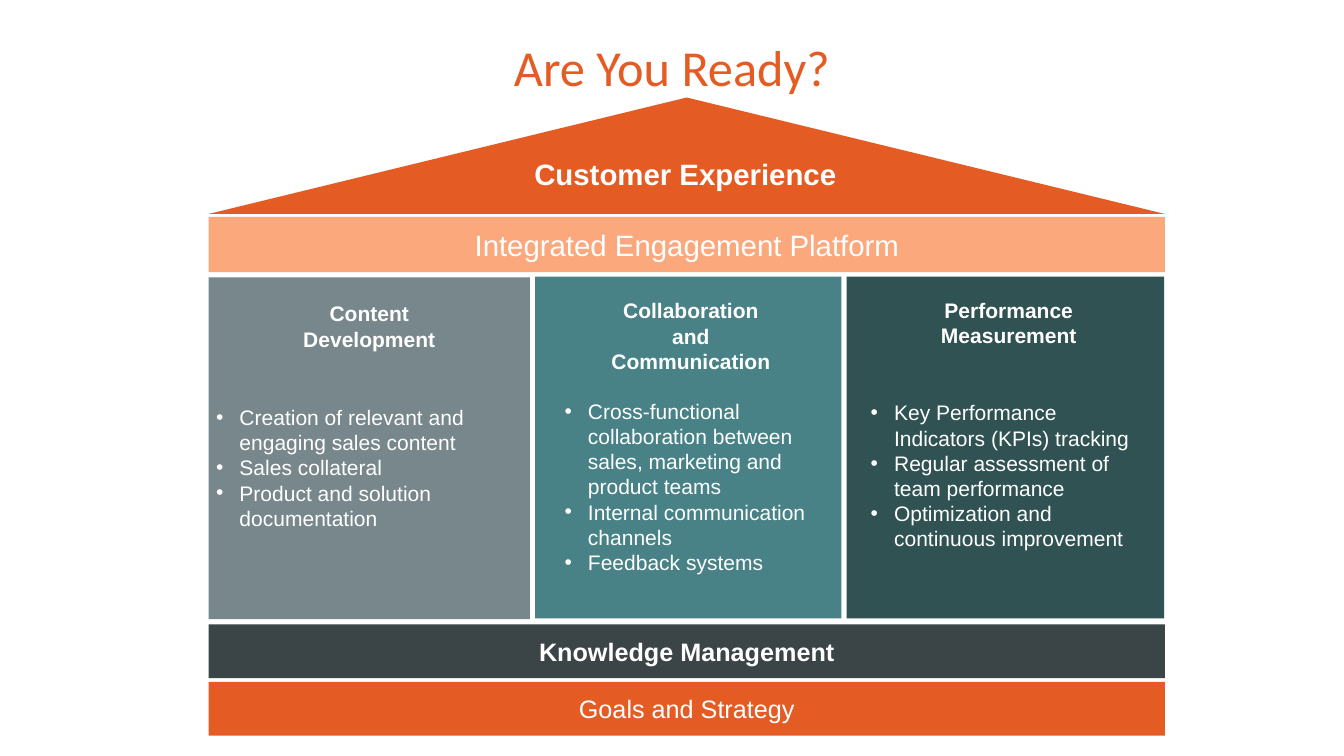
from lxml import etree
from pptx import Presentation
from pptx.dml.color import RGBColor
from pptx.enum.shapes import MSO_SHAPE
from pptx.enum.text import MSO_ANCHOR, MSO_AUTO_SIZE, PP_ALIGN
from pptx.oxml.ns import qn
from pptx.util import Inches, Pt

RECT, TRIANGLE = MSO_SHAPE.RECTANGLE, MSO_SHAPE.ISOSCELES_TRIANGLE
LEFT, CENTER = PP_ALIGN.LEFT, PP_ALIGN.CENTER
TOP, MIDDLE = MSO_ANCHOR.TOP, MSO_ANCHOR.MIDDLE
NO_FIT = MSO_AUTO_SIZE.NONE

COLORS = {
    "white": "FFFFFF",
    "orange": "E45C24",
    "peach": "FCA87D",
    "charcoal": "3B4446",
    "gray": "77878B",
    "teal": "488286",
    "pine": "305252",
}
HOUSE_LEFT, HOUSE_WIDTH = 2.76, 12.65
INDENT = 0.31

BANDS = [
    ("Integrated Engagement Platform", 2.87, 0.73, "peach", 28, False),
    ("Knowledge Management", 8.26, 0.71, "charcoal", 24, True),
    ("Goals and Strategy", 9.02, 0.71, "orange", 24, False),
]
PILLARS = [
    ("gray", (2.76, 3.67, 4.25, 4.52),
     (3.19, 3.93, 3.39, 0.77), ["Content", "Development"],
     (2.76, 5.3, 4.19, 1.78),
     ["Creation of relevant and engaging sales content",
      "Sales collateral",
      "Product and solution documentation"]),
    ("teal", (7.08, 3.66, 4.05, 4.52),
     (7.87, 3.89, 2.54, 1.11), ["Collaboration", "and", "Communication"],
     (7.37, 5.22, 3.8, 2.46),
     ["Cross-functional collaboration between sales, marketing and product teams",
      "Internal communication channels",
      "Feedback systems"]),
    ("pine", (11.2, 3.66, 4.2, 4.52),
     (12.34, 3.88, 2.01, 0.77), ["Performance", "Measurement"],
     (11.42, 5.24, 3.89, 2.12),
     ["Key Performance Indicators (KPIs) tracking",
      "Regular assessment of team performance",
      "Optimization and continuous improvement"]),
]


class Deck:
    font = "Arial"

    def __init__(self, width, height):
        self.prs = Presentation()
        self.prs.slide_width, self.prs.slide_height = Inches(width), Inches(height)
        self.s = self.prs.slides.add_slide(self.prs.slide_layouts[6])

    def group(self):
        return self.s.shapes.add_group_shape().shapes

    def add_lines(self, tf, lines, size, bold=False, color="white", align=CENTER,
                  bullets=False, font=None, spacing=None):
        for i, line in enumerate(lines):
            p = tf.paragraphs[0] if i == 0 else tf.add_paragraph()
            p.alignment = align
            if spacing:
                p.line_spacing = spacing
            if bullets:
                self.bullet(p)
            r = p.add_run()
            r.text = line
            r.font.name = font or self.font
            r.font.size = Pt(size)
            r.font.bold = bold
            r.font.color.rgb = RGBColor.from_string(COLORS[color])

    def bullet(self, p):
        pPr = p._p.get_or_add_pPr()
        pPr.set("marL", str(Inches(INDENT)))
        pPr.set("indent", str(-Inches(INDENT)))
        clr = etree.SubElement(pPr, qn("a:buClr"))
        etree.SubElement(clr, qn("a:srgbClr"), val=COLORS["white"])
        etree.SubElement(pPr, qn("a:buFont"), typeface="Arial")
        etree.SubElement(pPr, qn("a:buChar"), char="•")

    def block(self, shapes, kind, box, color):
        sp = shapes.add_shape(kind, *map(Inches, box))
        sp.shadow.inherit = False
        sp.fill.solid()
        sp.fill.fore_color.rgb = RGBColor.from_string(COLORS[color])
        sp.line.fill.background()
        return sp

    def band(self, text, top, height, color, size, bold):
        box = (HOUSE_LEFT, top, HOUSE_WIDTH, height)
        sp = self.block(self.s.shapes, RECT, box, color)
        sp.text_frame.vertical_anchor = MIDDLE
        self.add_lines(sp.text_frame, [text], size, bold)

    def text(self, shapes, box, lines, size, anchor=TOP, **style):
        tf = shapes.add_textbox(*map(Inches, box)).text_frame
        tf.word_wrap = True
        tf.auto_size = NO_FIT
        tf.vertical_anchor = anchor
        self.add_lines(tf, lines, size, **style)

    def pillar(self, color, box, head_box, heading, list_box, items):
        shapes = self.group()
        self.block(shapes, RECT, box, color)
        self.text(shapes, head_box, heading, 20, bold=True)
        self.text(shapes, list_box, items, 20, align=LEFT, bullets=True)

    def roof(self, text):
        shapes = self.group()
        self.block(shapes, TRIANGLE, (HOUSE_LEFT, 1.29, HOUSE_WIDTH, 1.54), "orange")
        self.text(shapes, (6.97, 2.01, 4.24, 0.57), [text], 28, bold=True, align=LEFT)

    def title(self, text):
        self.text(self.s.shapes, (0, 0.33, 17.78, 1.21), [text], 48, anchor=MIDDLE,
                  color="orange", font="Calibri", spacing=0.9)


def main():
    deck = Deck(17.78, 10)
    for band in BANDS:
        deck.band(*band)
    for pillar in PILLARS:
        deck.pillar(*pillar)
    deck.roof("Customer Experience")
    deck.title("Are You Ready?")
    deck.prs.save("out.pptx")


if __name__ == "__main__":
    main()
